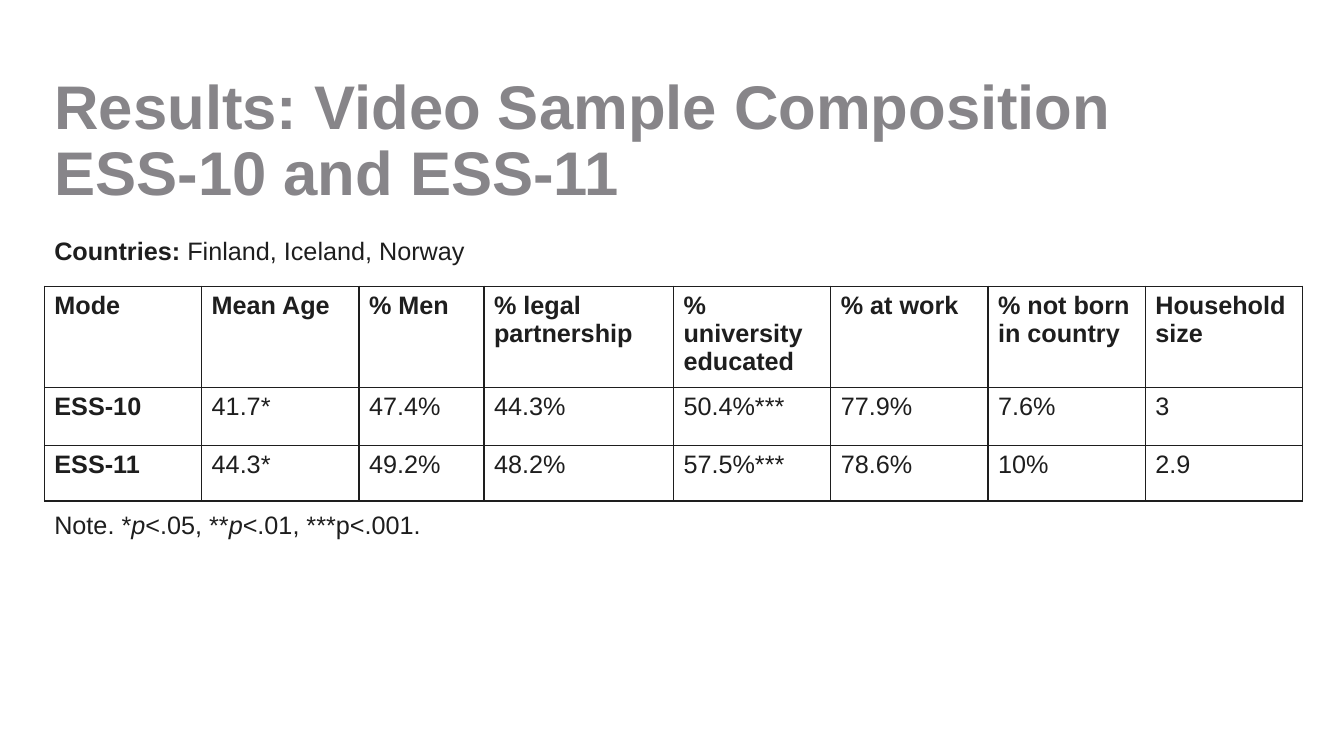
from lxml.etree import SubElement
from pptx import Presentation
from pptx.dml.color import RGBColor
from pptx.enum.text import MSO_ANCHOR, PP_ALIGN
from pptx.oxml.ns import qn
from pptx.util import Inches, Pt

# Content
TITLE = "Results: Video Sample Composition\vESS-10 and ESS-11"
# Each span is (text, bold, italic)
COUNTRIES = [("Countries: ", True, False), ("Finland, Iceland, Norway", False, False)]
NOTE = [
    ("Note. *", False, False),
    ("p", False, True),
    ("<.05, **", False, False),
    ("p", False, True),
    ("<.01, ***p<.001.", False, False),
]
ROWS = [
    ["Mode", "Mean Age", "% Men", "% legal partnership", "% university educated",
     "% at work", "% not born in country", "Household size"],
    ["ESS-10", "41.7*", "47.4%", "44.3%", "50.4%***", "77.9%", "7.6%", "3"],
    ["ESS-11", "44.3*", "49.2%", "48.2%", "57.5%***", "78.6%", "10%", "2.9"],
]
COLUMN_WIDTHS = [1.56, 1.56, 1.24, 1.88, 1.56, 1.56, 1.56, 1.56]
ROW_HEIGHTS = [0.94, 0.58, 0.55]

# Style
GREY = RGBColor(0x87, 0x85, 0x89)
INK = RGBColor(0x1E, 0x1E, 0x1E)
FONT = "Arial"
LEFT, WIDTH = 0.44, 12.45


def style_font(font, size, color, bold=False, italic=False):
    font.name = FONT
    font.size = Pt(size)
    font.color.rgb = color
    font.bold = bold
    font.italic = italic


def add_text_line(page, top, spans):
    box = page.shapes.add_textbox(Inches(LEFT), Inches(top), Inches(WIDTH), Inches(0.4))
    box.text_frame.word_wrap = True
    para = box.text_frame.paragraphs[0]
    for text, bold, italic in spans:
        span = para.add_run()
        span.text = text
        style_font(span.font, 18, INK, bold, italic)


def add_borders(cell):
    properties = cell._tc.get_or_add_tcPr()
    for index, side in enumerate(("lnL", "lnR", "lnT", "lnB")):
        line = properties.makeelement(qn(f"a:{side}"), {"w": str(Pt(1))})
        fill = SubElement(line, qn("a:solidFill"))
        SubElement(fill, qn("a:srgbClr"), val=str(INK))
        properties.insert(index, line)


def add_results_table(page):
    frame = page.shapes.add_table(
        len(ROWS), len(COLUMN_WIDTHS), Inches(LEFT), Inches(2.84),
        Inches(WIDTH), Inches(sum(ROW_HEIGHTS)))
    table = frame.table
    table.horz_banding = False
    for column, width in zip(table.columns, COLUMN_WIDTHS):
        column.width = Inches(width)
    for row, height in zip(table.rows, ROW_HEIGHTS):
        row.height = Inches(height)
    for r, values in enumerate(ROWS):
        for c, value in enumerate(values):
            cell = table.cell(r, c)
            cell.text = value
            cell.fill.background()
            span = cell.text_frame.paragraphs[0].runs[0]
            style_font(span.font, 18, INK, bold=r == 0 or c == 0)
            add_borders(cell)


def main():
    deck = Presentation()
    deck.slide_width, deck.slide_height = Inches(13.33), Inches(7.5)
    page = deck.slides.add_slide(deck.slide_layouts[5])

    # Title
    title = page.shapes.title
    title.left, title.top = Inches(LEFT), Inches(0.69)
    title.width, title.height = Inches(WIDTH), Inches(1.45)
    title.text_frame.text = TITLE
    title.text_frame.vertical_anchor = MSO_ANCHOR.MIDDLE
    para = title.text_frame.paragraphs[0]
    para.alignment = PP_ALIGN.LEFT
    para.line_spacing = 0.9
    for span in para.runs:
        style_font(span.font, 44, GREY, bold=True)

    # Countries, table and note
    add_text_line(page, 2.29, COUNTRIES)
    add_results_table(page)
    add_text_line(page, 5.0, NOTE)

    deck.save("out.pptx")


if __name__ == "__main__":
    main()
